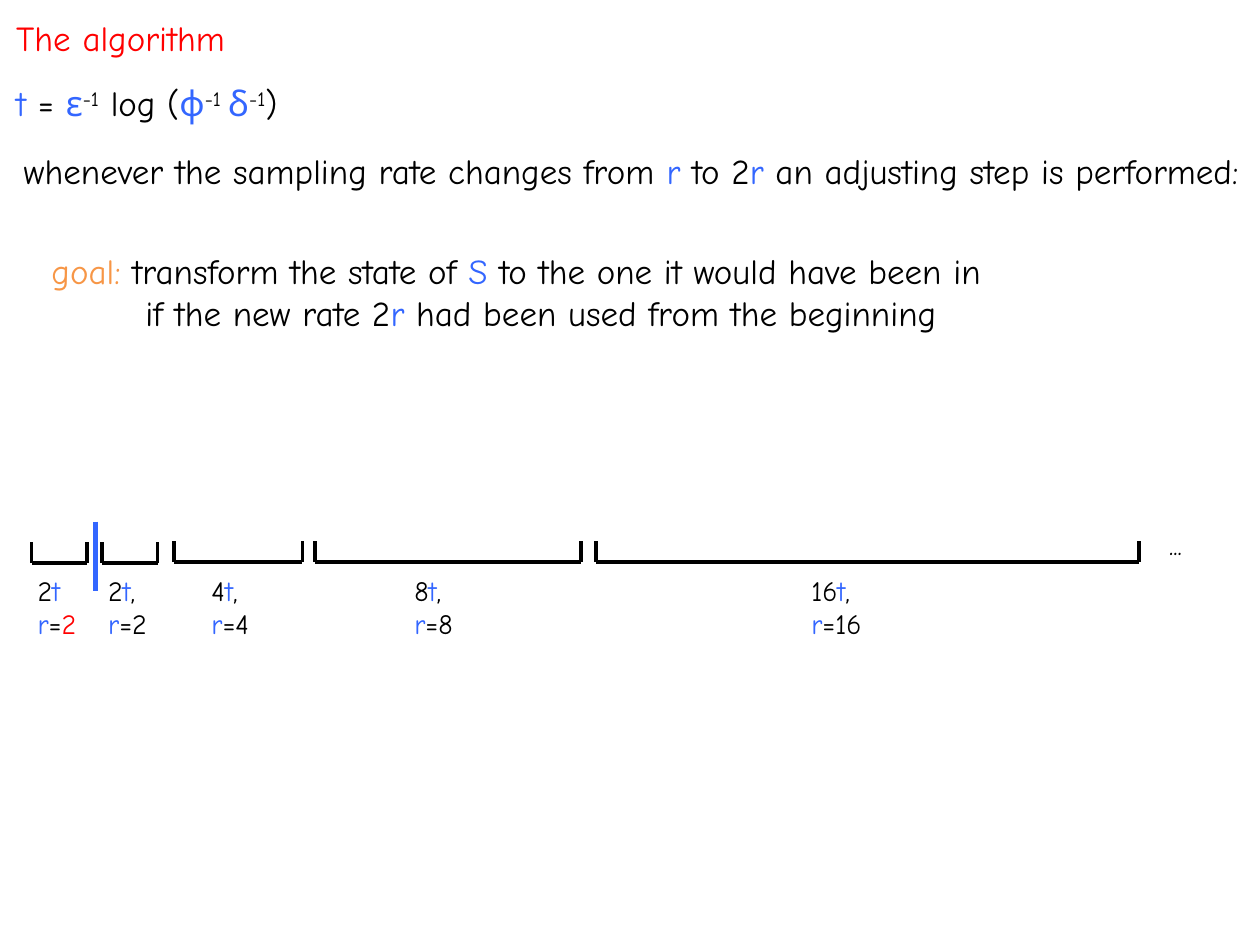
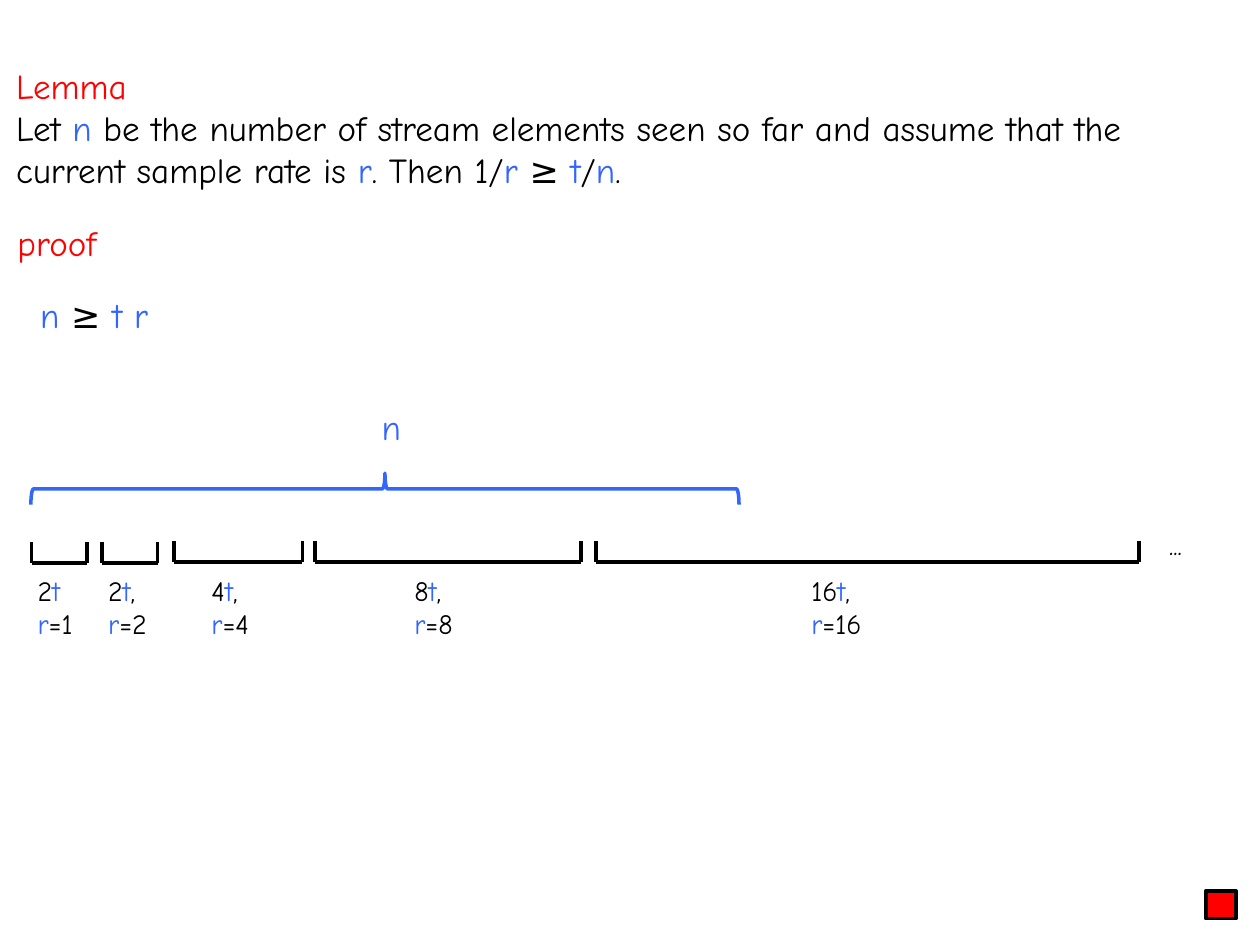
from lxml.etree import SubElement
from pptx import Presentation
from pptx.dml.color import RGBColor
from pptx.enum.shapes import MSO_CONNECTOR, MSO_SHAPE
from pptx.enum.text import MSO_AUTO_SIZE
from pptx.oxml.ns import qn
from pptx.util import Inches, Pt

COLORS = {
    "ink": "000000",
    "symbol": "3366FF",
    "heading": "FF0000",
    "goal": "F79646",
}
COLUMNS, ROWS = 100, 75

# left and right column, base row, label column, label width, factor of t, rate
PHASES = [
    (2.5, 6.9, 44.7, 2, 5.7, "2", "1"),
    (8.1, 12.5, 44.7, 7.6, 6.2, "2", "2"),
    (13.8, 24, 44.6, 15.8, 6.2, "4", "4"),
    (25, 46.1, 44.6, 31.9, 6.2, "8", "8"),
    (47.3, 90.4, 44.6, 63.4, 7.9, "16", "16"),
]
TICK_ROWS = 1.65


def symbol(text):
    return text, "symbol"


def superscript(text):
    return text, "ink", 30


class Deck:
    font = "Comic Neue"
    body_size = 20
    label_size = 16

    def __init__(self):
        self.presentation = Presentation()
        self.presentation.slide_width = Inches(10)
        self.presentation.slide_height = Inches(7.5)
        self.slide = None

    def new_slide(self):
        layout = self.presentation.slide_layouts[6]
        self.slide = self.presentation.slides.add_slide(layout)

    def place(self, column, row):
        """Turn grid columns and rows into slide lengths."""
        return (round(self.presentation.slide_width * column / COLUMNS),
                round(self.presentation.slide_height * row / ROWS))

    def color(self, name):
        return RGBColor.from_string(COLORS[name])

    def text(self, column, row, width, height, *paragraphs,
             size=body_size, last_indent=0):
        """Each paragraph is a list of plain strings or (text, colour[, raise])."""
        box = self.slide.shapes.add_textbox(*self.place(column, row),
                                            *self.place(width, height))
        frame = box.text_frame
        frame.word_wrap = True
        frame.auto_size = MSO_AUTO_SIZE.SHAPE_TO_FIT_TEXT
        for index, pieces in enumerate(paragraphs):
            paragraph = frame.add_paragraph() if index else frame.paragraphs[0]
            for piece in pieces:
                self.run(paragraph, piece, size)
        if last_indent:
            indent = self.place(last_indent, 0)[0]
            paragraph._p.get_or_add_pPr().set("marL", str(indent))

    def run(self, paragraph, piece, size):
        text, color, *raised = (piece, "ink") if isinstance(piece, str) else piece
        run = paragraph.add_run()
        run.text = text
        run.font.name = self.font
        run.font.size = Pt(size)
        run.font.color.rgb = self.color(color)
        if raised:
            run._r.get_or_add_rPr().set("baseline", str(raised[0] * 1000))

    def line(self, start, end, color="ink", weight=2):
        connector = self.slide.shapes.add_connector(
            MSO_CONNECTOR.STRAIGHT, *self.place(*start), *self.place(*end))
        connector.line.color.rgb = self.color(color)
        connector.line.width = Pt(weight)
        SubElement(connector._element.spPr, qn("a:effectLst"))

    def shape(self, kind, column, row, width, height, line, fill=None, rotation=0):
        shape = self.slide.shapes.add_shape(
            kind, *self.place(column, row), *self.place(width, height))
        shape.shadow.inherit = False
        shape.rotation = rotation
        shape.line.color.rgb = self.color(line)
        shape.line.width = Pt(2)
        if fill:
            shape.fill.solid()
            shape.fill.fore_color.rgb = self.color(fill)
        else:
            shape.fill.background()

    def bracket(self, left, right, base):
        self.line((left, base), (right, base))
        for side in (left, right):
            self.line((side, base), (side, base - TICK_ROWS))

    def timeline(self, first_rate):
        """Draw the sampling phases; first_rate is the run after the first 'r='."""
        for index, phase in enumerate(PHASES):
            left, right, base, label, width, factor, rate = phase
            self.bracket(left, right, base)
            length = [factor, symbol("t")] + ([","] if index else [])
            rates = [symbol("r"), "=", rate if index else first_rate]
            self.text(label, 45, width, 6.4, length, rates, size=self.label_size)
        self.text(91.8, 41.4, 5.3, 3.7, ["..."], size=self.label_size)


def algorithm_slide(deck):
    deck.new_slide()
    deck.text(0.3, 0.8, 96.9, 4.4, [("The algorithm", "heading")])
    deck.text(0.3, 6, 99.4, 4.4, [
        symbol("t "), "= ", symbol("ε"), superscript("-1"), " log (",
        symbol("ϕ"), superscript("-1 "), symbol("δ"), superscript("-1"), ")"])
    deck.text(0.9, 11.4, 99.4, 4.4, [
        "whenever the sampling rate changes from ", symbol("r"), " to 2",
        symbol("r"), " an adjusting step is performed:"])
    deck.text(
        3.1, 19.3, 85.8, 7.7,
        [("goal:", "goal"), " transform the state of ", symbol("S"),
         " to the one it would have been in"],
        ["if the new rate 2", symbol("r"),
         " had been used from the beginning"],
        last_indent=7.45)
    deck.timeline(("2", "heading"))
    deck.line((7.6, 41.4), (7.6, 46.9), "symbol", 3)


def lemma_slide(deck):
    deck.new_slide()
    deck.text(
        0.3, 4.6, 99.3, 11.1,
        [("Lemma", "heading")],
        ["Let ", symbol("n"),
         " be the number of stream elements seen so far and assume that"
         " the current sample rate is ", symbol("r"), ". Then 1/",
         symbol("r "), "≥ ", symbol("t"), "/", symbol("n"), "."])
    deck.text(0.4, 17.1, 99.3, 4.4, [("proof", "heading")])
    deck.text(2.2, 22.8, 31, 4.4, [symbol("n "), "≥ ", symbol("t r")])
    deck.timeline("1")
    deck.shape(MSO_SHAPE.LEFT_BRACE, 29.3, 10.7, 2.5, 56.2, "symbol", rotation=90)
    deck.text(29.3, 31.7, 5.2, 4.4, [symbol("n")])
    deck.shape(MSO_SHAPE.RECTANGLE, 95.7, 70.7, 2.4, 2.2, "ink", fill="heading")


def main():
    deck = Deck()
    algorithm_slide(deck)
    lemma_slide(deck)
    deck.presentation.save("out.pptx")


if __name__ == "__main__":
    main()
